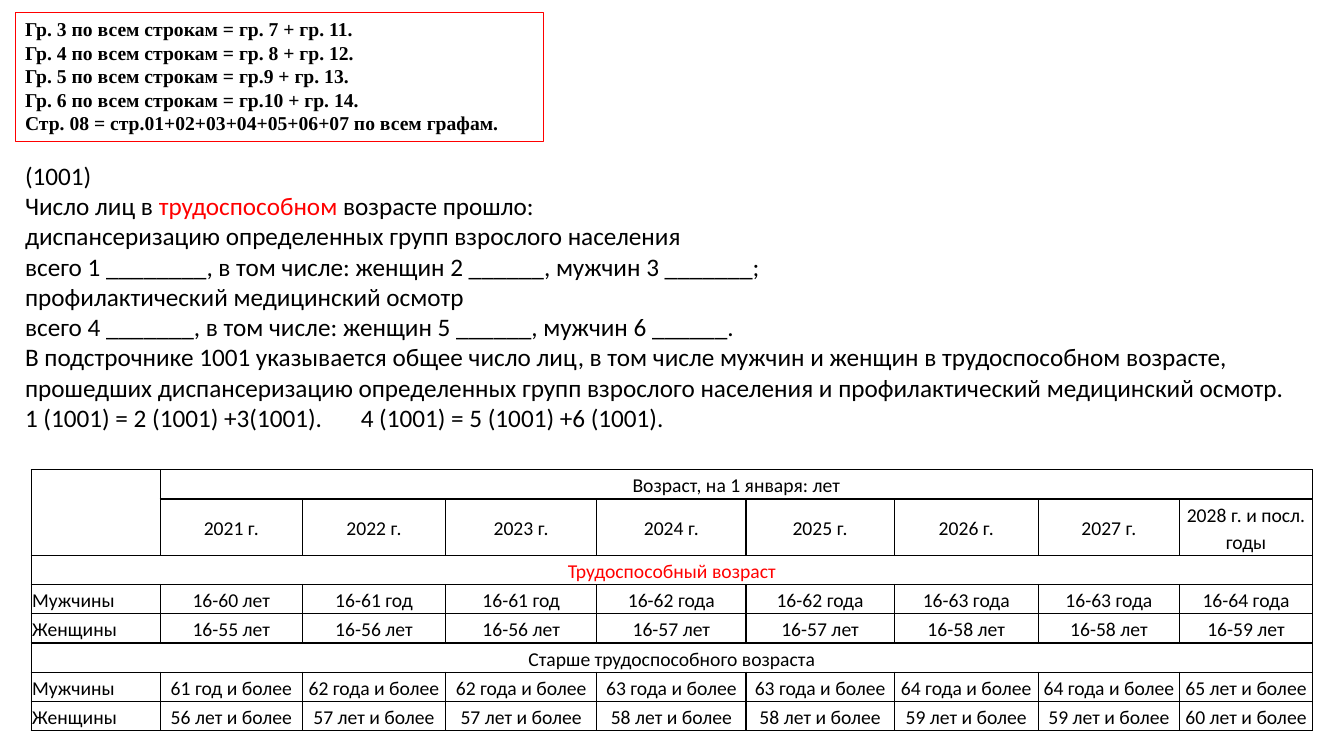
from dataclasses import dataclass

from lxml import etree
from pptx import Presentation
from pptx.dml.color import RGBColor
from pptx.enum.shapes import MSO_SHAPE
from pptx.enum.text import MSO_ANCHOR, PP_ALIGN
from pptx.oxml.ns import qn
from pptx.util import Inches, Pt

RECTANGLE = MSO_SHAPE.RECTANGLE
TOP, MIDDLE = MSO_ANCHOR.TOP, MSO_ANCHOR.MIDDLE
LEFT, CENTER, JUSTIFY = PP_ALIGN.LEFT, PP_ALIGN.CENTER, PP_ALIGN.JUSTIFY

# The page is a fine grid of square units
UNIT = Inches(0.01)
PAGE_COLUMNS, PAGE_ROWS = 1333, 750


@dataclass(frozen=True)
class Theme:
    black: str = "000000"
    red: str = "FF0000"
    white: str = "FFFFFF"
    rules_font: str = "Times New Roman"
    body_font: str = "Calibri"
    small: int = 14
    large: int = 18
    frame_line: float = 0.75
    table_line: float = 1
    table_spacing: float = 1.15


THEME = Theme()

RULES = [
    "Гр. 3 по всем строкам = гр. 7 + гр. 11.",
    "Гр. 4 по всем строкам = гр. 8 + гр. 12.",
    "Гр. 5 по всем строкам = гр.9 + гр. 13.",
    "Гр. 6 по всем строкам = гр.10 + гр. 14.",
    "Стр. 08 = стр.01+02+03+04+05+06+07 по всем графам.",
]

# A line is a list of (text, colour) pieces
FORM_LINES = [
    [("(1001)", THEME.black)],
    [("Число лиц в ", THEME.black), ("трудоспособном", THEME.red),
     (" возрасте прошло:", THEME.black)],
    [("диспансеризацию определенных групп взрослого населения", THEME.black)],
    [("всего 1 ________, в том числе: женщин 2 ______, мужчин 3 _______;", THEME.black)],
    [("профилактический медицинский осмотр", THEME.black)],
    [("всего 4 _______, в том числе: женщин 5 ______, мужчин 6 ______.", THEME.black)],
    [("В подстрочнике 1001 указывается общее число лиц, в том числе мужчин и женщин "
      "в трудоспособном возрасте, прошедших диспансеризацию определенных групп "
      "взрослого населения и профилактический медицинский осмотр.", THEME.black)],
    [("1 (1001) = 2 (1001) +3(1001).\t4 (1001) = 5 (1001) +6 (1001).", THEME.black)],
]
FORMULA_TAB = 333

COLUMN_WIDTHS = [128, 141, 142, 150, 148, 147, 143, 140, 132]
ROW_HEIGHTS = [29, 56] + [29] * 6
AGE_ROWS = [
    ["", "Возраст, на 1 января: лет"],
    [""] + [f"{year} г." for year in range(2021, 2028)] + ["2028 г. и посл. годы"],
    ["Трудоспособный возраст"],
    ["Мужчины", "16-60 лет", "16-61 год", "16-61 год", "16-62 года", "16-62 года",
     "16-63 года", "16-63 года", "16-64 года"],
    ["Женщины"] + [f"16-{age} лет" for age in (55, 56, 56, 57, 57, 58, 58, 59)],
    ["Старше трудоспособного возраста"],
    ["Мужчины", "61 год и более", "62 года и более", "62 года и более",
     "63 года и более", "63 года и более", "64 года и более", "64 года и более",
     "65 лет и более"],
    ["Женщины"] + [f"{age} лет и более" for age in (56, 57, 57, 58, 58, 59, 59, 60)],
]
WORKING_AGE_ROW = 2
# First row, first column, last row, last column
MERGES = [(0, 0, 1, 0), (0, 1, 0, 8), (2, 0, 2, 8), (5, 0, 5, 8)]


def place(*units):
    return [unit * UNIT for unit in units]


def add_span(para, text, font=THEME.body_font, size=THEME.small,
             color=THEME.black, bold=False):
    span = para.add_run()
    span.text = text
    span.font.name = font
    span.font.size = Pt(size)
    span.font.bold = bold
    span.font.color.rgb = RGBColor.from_string(color)


def write_lines(frame, lines, align=LEFT, **text_format):
    """Fill a text frame; each line is a list of (text, colour) pieces."""
    frame.word_wrap = True
    frame.vertical_anchor = TOP
    for number, pieces in enumerate(lines):
        para = frame.add_paragraph() if number else frame.paragraphs[0]
        para.alignment = align
        for text, color in pieces:
            add_span(para, text, color=color, **text_format)


def add_tab_stop(para, position):
    stops = etree.SubElement(para._p.get_or_add_pPr(), qn("a:tabLst"))
    etree.SubElement(stops, qn("a:tab"), pos=str(position * UNIT), algn="l")


def add_rules_box(page):
    box = page.shapes.add_shape(RECTANGLE, *place(15, 12, 524, 128))
    box.shadow.inherit = False
    box.fill.background()
    box.line.color.rgb = RGBColor.from_string(THEME.red)
    box.line.width = Pt(THEME.frame_line)
    write_lines(box.text_frame, [[(rule, THEME.black)] for rule in RULES],
                align=JUSTIFY, font=THEME.rules_font, bold=True)


def add_form_text(page):
    box = page.shapes.add_textbox(*place(15, 154, 1309, 283))
    write_lines(box.text_frame, FORM_LINES, size=THEME.large)
    add_tab_stop(box.text_frame.paragraphs[-1], FORMULA_TAB)


def style_cell(cell):
    cell.margin_left = cell.margin_right = UNIT
    cell.margin_top = cell.margin_bottom = UNIT
    cell.vertical_anchor = MIDDLE
    properties = cell._tc.get_or_add_tcPr()
    for side in ("a:lnL", "a:lnR", "a:lnT", "a:lnB"):
        line = etree.SubElement(properties, qn(side), w=str(Pt(THEME.table_line)))
        paint = etree.SubElement(line, qn("a:solidFill"))
        etree.SubElement(paint, qn("a:srgbClr"), val=THEME.black)
    cell.fill.solid()
    cell.fill.fore_color.rgb = RGBColor.from_string(THEME.white)


def add_age_table(page):
    area = place(31, 466, sum(COLUMN_WIDTHS), sum(ROW_HEIGHTS))
    table = page.shapes.add_table(len(ROW_HEIGHTS), len(COLUMN_WIDTHS), *area).table
    table.first_row = table.horz_banding = False
    for column, width in zip(table.columns, COLUMN_WIDTHS):
        column.width = width * UNIT
    for row, height in zip(table.rows, ROW_HEIGHTS):
        row.height = height * UNIT
    for cell in table.iter_cells():
        style_cell(cell)
    for top, left, bottom, right in MERGES:
        table.cell(top, left).merge(table.cell(bottom, right))

    # Sex labels stand left, everything else is centred
    for row_number, texts in enumerate(AGE_ROWS):
        color = THEME.red if row_number == WORKING_AGE_ROW else THEME.black
        for column_number, text in enumerate(texts):
            if not text:
                continue
            is_label = column_number == 0 and len(texts) > 1
            para = table.cell(row_number, column_number).text_frame.paragraphs[0]
            para.alignment = LEFT if is_label else CENTER
            para.line_spacing = THEME.table_spacing
            add_span(para, text, color=color)


def main():
    deck = Presentation()
    deck.slide_width, deck.slide_height = place(PAGE_COLUMNS, PAGE_ROWS)
    page = deck.slides.add_slide(deck.slide_layouts[6])
    add_rules_box(page)
    add_form_text(page)
    add_age_table(page)
    deck.save("out.pptx")


if __name__ == "__main__":
    main()
